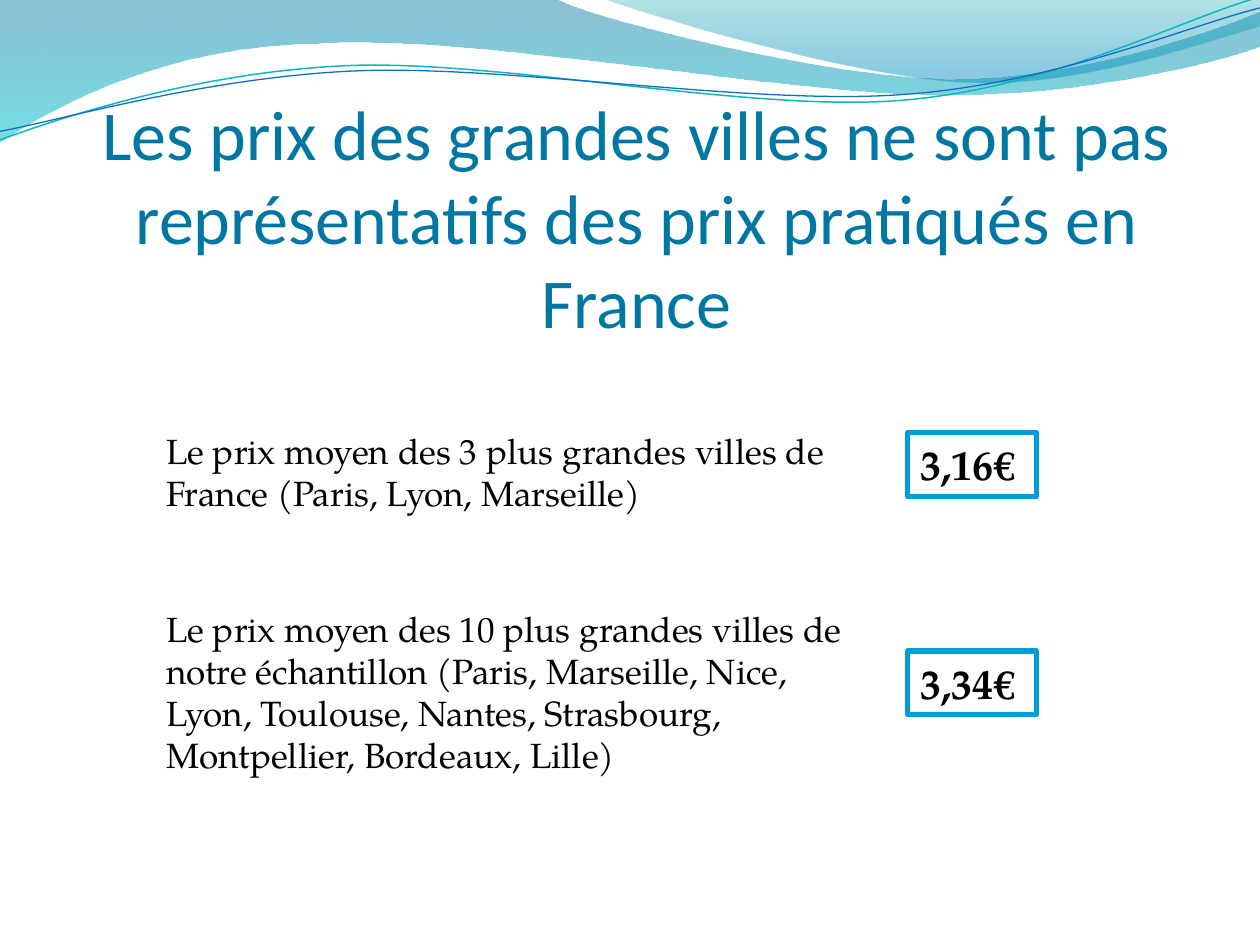
from lxml.etree import SubElement
from pptx import Presentation
from pptx.dml.color import RGBColor
from pptx.enum.shapes import MSO_SHAPE as Shape
from pptx.enum.text import MSO_ANCHOR as Anchor, PP_ALIGN as Align
from pptx.oxml.ns import qn
from pptx.util import Pt

WHITE = RGBColor(0xFF, 0xFF, 0xFF)
BLACK = RGBColor(0x00, 0x00, 0x00)
TITLE_BLUE = RGBColor(0x00, 0x76, 0xA3)
FRAME_BLUE = RGBColor(0x00, 0x9D, 0xD9)
DEEP_BLUE = RGBColor(0x00, 0x74, 0xA1)
AQUA = RGBColor(0x00, 0xC6, 0xCF)
TEAL = RGBColor(0x00, 0xA1, 0xA9)
SKY_BLUE = RGBColor(0x00, 0x8B, 0xBF)
LINE_TEAL = RGBColor(0x0A, 0xB8, 0xBF)
LINE_BLUE = RGBColor(0x0F, 0x6F, 0xC6)
TITLE_FONT = "Calibri"
BODY_FONT = "TeX Gyre Pagella"

WIDE_WAVE = [
    (0, 0), (317, -1),
    (343, 12, 478, 45, 546, 45), (614, 45, 690, 19, 720, 6.5), (721, 26),
    (708, 32, 626, 55, 537, 54), (448, 54, 275, 20, 185, 24.5),
    (93, 26, 33, 60, -1, 81.5), (0, 0),
]
RIGHT_WAVE = [
    (345, -0.5),
    (366, 8, 491, 45, 554, 47), (616, 50, 692, 23, 720, 15),
    (720, 0), (345, -0.5),
]
TEAL_CURVE = [
    (0, 80),
    (35, 67, 114, 41, 199, 37.5), (284, 34, 427, 64, 513, 57.5),
    (600, 51, 675, 11, 719, -1.5),
]
BLUE_CURVE = [
    (0, 75),
    (34, 69, 118, 44, 204, 40.5), (290, 37, 430, 60.5, 516, 54),
    (602, 48, 678, 15, 720, 4.5),
]


def add_outline(page, segments, closed):
    """Add a freeform of straight lines and cubic curves."""
    points = [(Pt(x), Pt(y)) for segment in segments
              for x, y in zip(segment[::2], segment[1::2])]
    builder = page.shapes.build_freeform(*points[0])
    builder.add_line_segments(points[1:], close=closed)
    shape = builder.convert_to_shape()
    shape.shadow.inherit = False
    steps = iter(list(shape._element.iter(qn("a:lnTo"))))
    for segment in segments[1:]:
        group = [next(steps) for _ in segment[::2]]
        if len(group) == 3:
            curve = group[0].makeelement(qn("a:cubicBezTo"))
            group[0].addprevious(curve)
            for step in group:
                curve.append(step[0])
                step.getparent().remove(step)
    return shape


def add_wave(page, segments, stops):
    """Add a wave with a translucent gradient from top to bottom."""
    wave = add_outline(page, segments, True)
    wave.line.fill.background()
    wave.fill.gradient()
    wave.fill.gradient_angle = 270
    for stop, (position, color, _) in zip(wave.fill.gradient_stops, stops):
        stop.position = position
        stop.color.rgb = color
    colors = wave._element.spPr.iter(qn("a:srgbClr"))
    for color, (_, _, opacity) in zip(colors, stops):
        SubElement(color, qn("a:alpha"), val=str(opacity * 1000))


def add_curve(page, segments, color, width):
    """Add an open curved line."""
    curve = add_outline(page, segments, False)
    curve.fill.background()
    curve.line.color.rgb = color
    curve.line.width = Pt(width)


def add_span(para, text, font, size, color, bold=False):
    """Add one formatted run to a paragraph."""
    span = para.add_run()
    span.text = text
    span.font.name = font
    span.font.size = Pt(size)
    span.font.color.rgb = color
    span.font.bold = bold


def set_title(page, text):
    """Place and fill the title, in front of the waves."""
    title = page.shapes.title
    title.left, title.top, title.width, title.height = (
        Pt(37), Pt(106), Pt(653.5), Pt(90))
    frame = title.text_frame
    frame.word_wrap = True
    frame.vertical_anchor = Anchor.BOTTOM
    frame.margin_left = frame.margin_right = frame.margin_bottom = 0
    frame.margin_top = Pt(3.6)
    para = frame.paragraphs[0]
    para.alignment = Align.CENTER
    add_span(para, text, TITLE_FONT, 40, TITLE_BLUE)
    page.shapes._spTree.append(title._element)


def add_description(page, top, width, height, text):
    """Add the text that explains a price."""
    box = page.shapes.add_textbox(Pt(87.8), Pt(top), Pt(width), Pt(height))
    box.text_frame.word_wrap = True
    add_span(box.text_frame.paragraphs[0], text, BODY_FONT, 20, BLACK)


def add_price(page, top, text):
    """Add a framed price."""
    box = page.shapes.add_shape(
        Shape.RECTANGLE, Pt(518.7), Pt(top), Pt(73.5), Pt(36.35))
    box.shadow.inherit = False
    box.fill.solid()
    box.fill.fore_color.rgb = WHITE
    box.line.color.rgb = FRAME_BLUE
    box.line.width = Pt(3)
    box.text_frame.word_wrap = True
    box.text_frame.vertical_anchor = Anchor.TOP
    para = box.text_frame.paragraphs[0]
    para.alignment = Align.LEFT
    add_span(para, text, BODY_FONT, 24, BLACK, bold=True)


def main():
    """Build the slide and save the deck."""
    deck = Presentation()
    deck.slide_width, deck.slide_height = Pt(720), Pt(540)
    page = deck.slides.add_slide(deck.slide_layouts[5])
    add_wave(page, WIDE_WAVE, [(0, DEEP_BLUE, 45), (1, AQUA, 55)])
    add_wave(page, RIGHT_WAVE, [(0, TEAL, 30), (0.8, SKY_BLUE, 45)])
    add_curve(page, TEAL_CURVE, LINE_TEAL, 0.85)
    add_curve(page, BLUE_CURVE, LINE_BLUE, 0.75)
    set_title(page, "Les prix des grandes villes ne sont pas "
                    "représentatifs des prix pratiqués en France")
    add_description(page, 242, 402.5, 55.5,
                    "Le prix moyen des 3 plus grandes villes de France "
                    "(Paris, Lyon, Marseille)")
    add_price(page, 247.3, "3,16€")
    add_description(page, 343.5, 414, 104.5,
                    "Le prix moyen des 10 plus grandes villes de notre "
                    "échantillon (Paris, Marseille, Nice, Lyon, Toulouse, "
                    "Nantes, Strasbourg, Montpellier, Bordeaux, Lille)")
    add_price(page, 372, "3,34€")
    deck.save("out.pptx")


if __name__ == "__main__":
    main()
